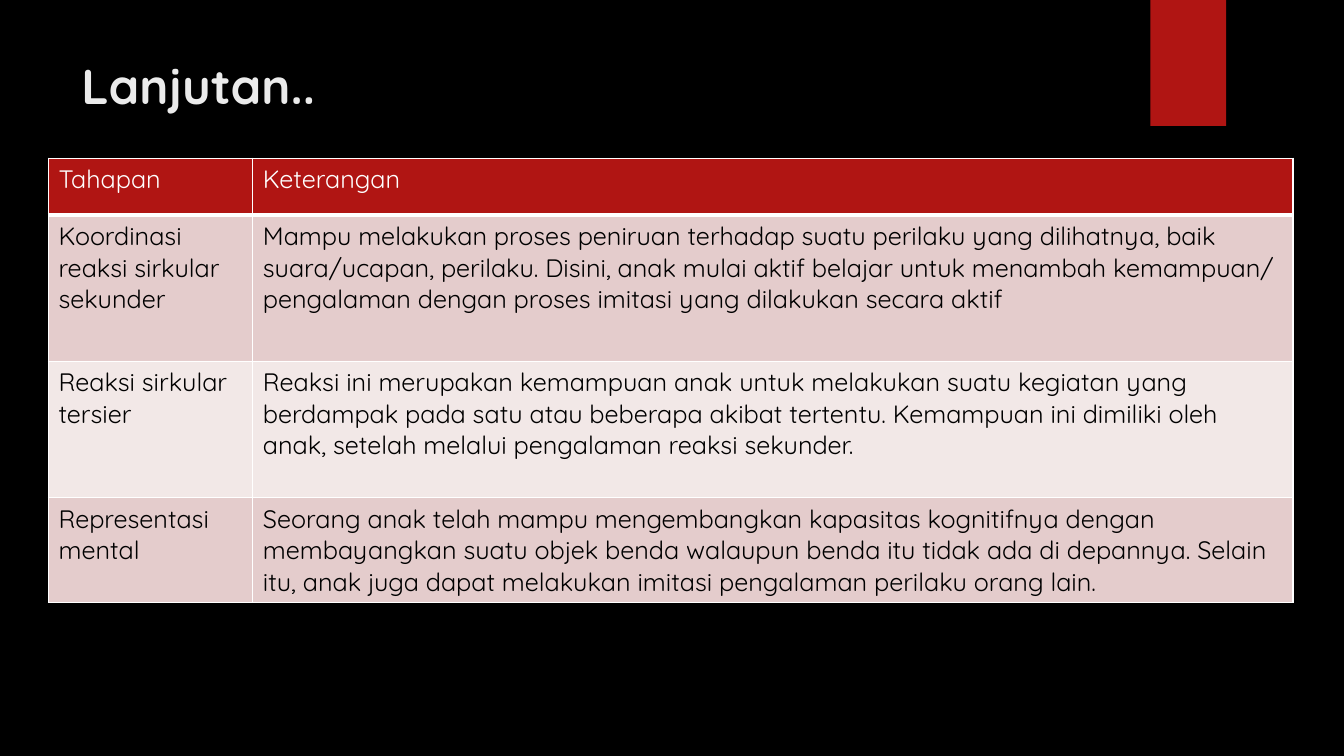
from lxml.etree import SubElement
from pptx import Presentation
from pptx.dml.color import RGBColor as RGB
from pptx.enum.shapes import MSO_SHAPE as Shape
from pptx.enum.text import MSO_ANCHOR as Anchor
from pptx.oxml.ns import qn
from pptx.util import Pt

HUES = {"black": "000000", "red": "B01513", "title": "EBEBEB",
        "white": "FFFFFF", "rose": "E4CCCC", "pale": "F2E8E7"}
FONT = "Quicksand"


def style(para, size, hue, bold=False):
    font = para.font
    font.name, font.size, font.bold = FONT, Pt(size), bold
    font.color.rgb = RGB.from_string(HUES[hue])


def edge(cell, side, width):
    props = cell._tc.get_or_add_tcPr()
    line = SubElement(props, qn("a:ln" + side), w=str(Pt(width)))
    fill = SubElement(line, qn("a:solidFill"))
    SubElement(fill, qn("a:srgbClr"), val=HUES["white"])


# Slide and background
deck = Presentation()
deck.slide_width, deck.slide_height = Pt(960), Pt(540)
slide = deck.slides.add_slide(deck.slide_layouts[6])
back = slide.background.fill
back.solid()
back.fore_color.rgb = RGB.from_string(HUES["black"])

# Red tab at the top
tab = slide.shapes.add_shape(Shape.RECTANGLE, Pt(821.8), 0, Pt(54), Pt(90))
tab.shadow.inherit = False
tab.fill.solid()
tab.fill.fore_color.rgb = RGB.from_string(HUES["red"])
tab.line.fill.background()

# Title
title = slide.shapes.add_textbox(Pt(51), Pt(36), Pt(741), Pt(110)).text_frame
title.word_wrap = True
title.vertical_anchor = Anchor.TOP
title.text = "Lanjutan.."
style(title.paragraphs[0], 35, "title", True)

# Table of stages
rows = [
    ("Tahapan", "Keterangan"),
    ("Koordinasi reaksi sirkular sekunder",
     "Mampu melakukan proses peniruan terhadap suatu perilaku yang dilihatnya, "
     "baik suara/ucapan, perilaku. Disini, anak mulai aktif belajar untuk "
     "menambah kemampuan/ pengalaman dengan proses imitasi yang dilakukan "
     "secara aktif"),
    ("Reaksi sirkular tersier",
     "Reaksi ini merupakan kemampuan anak untuk melakukan suatu kegiatan yang "
     "berdampak pada satu atau beberapa akibat tertentu. Kemampuan ini dimiliki "
     "oleh anak, setelah melalui pengalaman reaksi sekunder."),
    ("Representasi mental",
     "Seorang anak telah mampu mengembangkan kapasitas kognitifnya dengan "
     "membayangkan suatu objek benda walaupun benda itu tidak ada di depannya. "
     "Selain itu, anak juga dapat melakukan imitasi pengalaman perilaku orang "
     "lain."),
]
widths = [146, 743]
heights = [40.8, 104.4, 97.4, 75]
fills = ["red", "rose", "pale", "rose"]

table = slide.shapes.add_table(
    len(rows), len(widths), Pt(34.6), Pt(113),
    Pt(sum(widths)), Pt(sum(heights))).table
for col, width in zip(table.columns, widths):
    col.width = Pt(width)
for i, row in enumerate(rows):
    table.rows[i].height = Pt(heights[i])
    for j, text in enumerate(row):
        cell = table.cell(i, j)
        cell.text = text
        style(cell.text_frame.paragraphs[0], 18, "black" if i else "white")
        # A thick rule parts the header from the body
        edge(cell, "L", 1)
        edge(cell, "R", 1)
        edge(cell, "T", 3 if i == 1 else 1)
        edge(cell, "B", 3 if i == 0 else 1)
        cell.fill.solid()
        cell.fill.fore_color.rgb = RGB.from_string(HUES[fills[i]])

deck.save("out.pptx")
